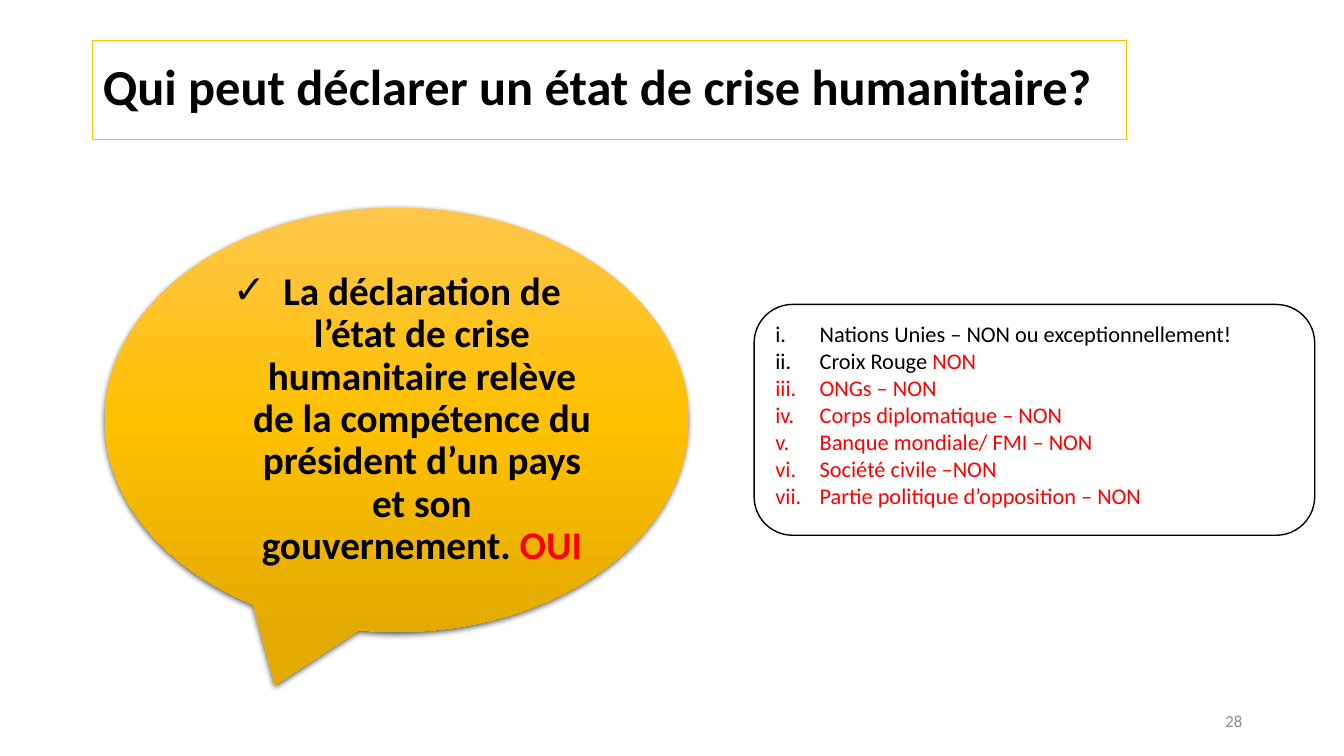
from lxml.etree import SubElement
from pptx import Presentation
from pptx.dml.color import RGBColor
from pptx.enum.shapes import MSO_SHAPE as Shape
from pptx.enum.text import MSO_ANCHOR as Anchor, PP_ALIGN as Align
from pptx.oxml.ns import qn
from pptx.util import Inches, Pt

BLACK = RGBColor(0x00, 0x00, 0x00)
WHITE = RGBColor(0xFF, 0xFF, 0xFF)
RED = RGBColor(0xFF, 0x00, 0x00)
GREY = RGBColor(0x8C, 0x8C, 0x8C)
GOLD = RGBColor(0xFF, 0xC0, 0x00)
LIGHT_GOLD = RGBColor(0xFF, 0xC6, 0x4B)
DARK_GOLD = RGBColor(0xE3, 0xAB, 0x00)

QUESTION = "Qui peut déclarer un état de crise humanitaire?"
ANSWER = [
    ("La déclaration de l’état de crise humanitaire relève de la compétence "
     "du président d’un pays et son gouvernement. ", BLACK),
    ("OUI", RED),
]
EXCLUDED = [
    [("Nations Unies – NON ou exceptionnellement!", BLACK)],
    [("Croix Rouge", BLACK), (" NON", RED)],
    [("ONGs – NON", RED)],
    [("Corps diplomatique – NON", RED)],
    [("Banque mondiale/ FMI – NON", RED)],
    [("Société civile –NON", RED)],
    [("Partie politique d’opposition – NON", RED)],
]
PAGE = "28"
CHECK = ("buChar", {"char": "✓"})
ROMAN = ("buAutoNum", {"type": "romanLcPeriod"})


def write(shape, paragraphs, size, bold=False, align=Align.LEFT,
          anchor=Anchor.MIDDLE, spacing=1.0, before=0, bullet=None, indent=0):
    """Fill a shape with paragraphs of (text, colour) runs."""
    frame = shape.text_frame
    frame.word_wrap = True
    frame.vertical_anchor = anchor
    for number, runs in enumerate(paragraphs):
        paragraph = frame.add_paragraph() if number else frame.paragraphs[0]
        paragraph.alignment = align
        paragraph.line_spacing = spacing
        paragraph.space_before = Pt(before)
        if bullet:
            tag, settings = bullet
            properties = paragraph._p.get_or_add_pPr()
            properties.set("marL", str(Inches(indent)))
            properties.set("indent", str(-Inches(indent)))
            SubElement(properties, qn("a:buFont"), typeface="Calibri")
            SubElement(properties, qn(f"a:{tag}"), settings)
        for text, colour in runs:
            run = paragraph.add_run()
            run.text = text
            run.font.name = "Calibri"
            run.font.size = Pt(size)
            run.font.bold = bold
            run.font.color.rgb = colour


def outline(shape, colour, width):
    """Give a shape a white fill and a coloured border."""
    shape.fill.solid()
    shape.fill.fore_color.rgb = WHITE
    shape.line.color.rgb = colour
    shape.line.width = Pt(width)


def shade(shape, stops):
    """Apply a top-to-bottom gradient and a soft shadow below."""
    shape.fill.gradient()
    shape.fill.gradient_angle = 270
    properties = shape._element.spPr
    stop_list = properties.find(qn("a:gradFill")).find(qn("a:gsLst"))
    stop_list.clear()
    for position, colour in stops:
        stop = SubElement(stop_list, qn("a:gs"), pos=str(position * 1000))
        SubElement(stop, qn("a:srgbClr"), val=str(colour))
    shape.line.fill.background()
    shape.shadow.inherit = False
    shadow = SubElement(properties.find(qn("a:effectLst")), qn("a:outerShdw"),
                        blurRad=str(Pt(4.5)), dist=str(Pt(1.5)),
                        dir="5400000", algn="ctr", rotWithShape="0")
    tint = SubElement(shadow, qn("a:srgbClr"), val=str(BLACK))
    SubElement(tint, qn("a:alpha"), val="63000")


def main():
    """Build the slide and save it."""
    deck = Presentation()
    deck.slide_width, deck.slide_height = Inches(13.33), Inches(7.5)
    slide = deck.slides.add_slide(deck.slide_layouts[5])

    title = slide.shapes.title
    title.left, title.top = Inches(0.92), Inches(0.4)
    title.width, title.height = Inches(10.25), Inches(0.98)
    outline(title, GOLD, 0.75)
    write(title, [[(QUESTION, BLACK)]], 36, bold=True, spacing=0.9)

    page_number = slide.shapes.add_textbox(
        Inches(9.42), Inches(6.95), Inches(3), Inches(0.4))
    write(page_number, [[(PAGE, GREY)]], 12, align=Align.RIGHT)

    answer = slide.shapes.add_shape(
        Shape.OVAL_CALLOUT, Inches(1.04), Inches(2.06), Inches(5.79), Inches(4.21))
    shade(answer, [(0, LIGHT_GOLD), (50, GOLD), (100, DARK_GOLD)])
    write(answer, [ANSWER], 28, bold=True, align=Align.CENTER, spacing=0.9,
          before=10, bullet=CHECK, indent=0.5)

    excluded = slide.shapes.add_shape(
        Shape.ROUNDED_RECTANGLE, Inches(7.48), Inches(3.02), Inches(5.56), Inches(2.29))
    outline(excluded, BLACK, 1)
    excluded.shadow.inherit = False
    write(excluded, EXCLUDED, 16, anchor=Anchor.TOP, bullet=ROMAN, indent=0.44)

    deck.save("out.pptx")


if __name__ == "__main__":
    main()
